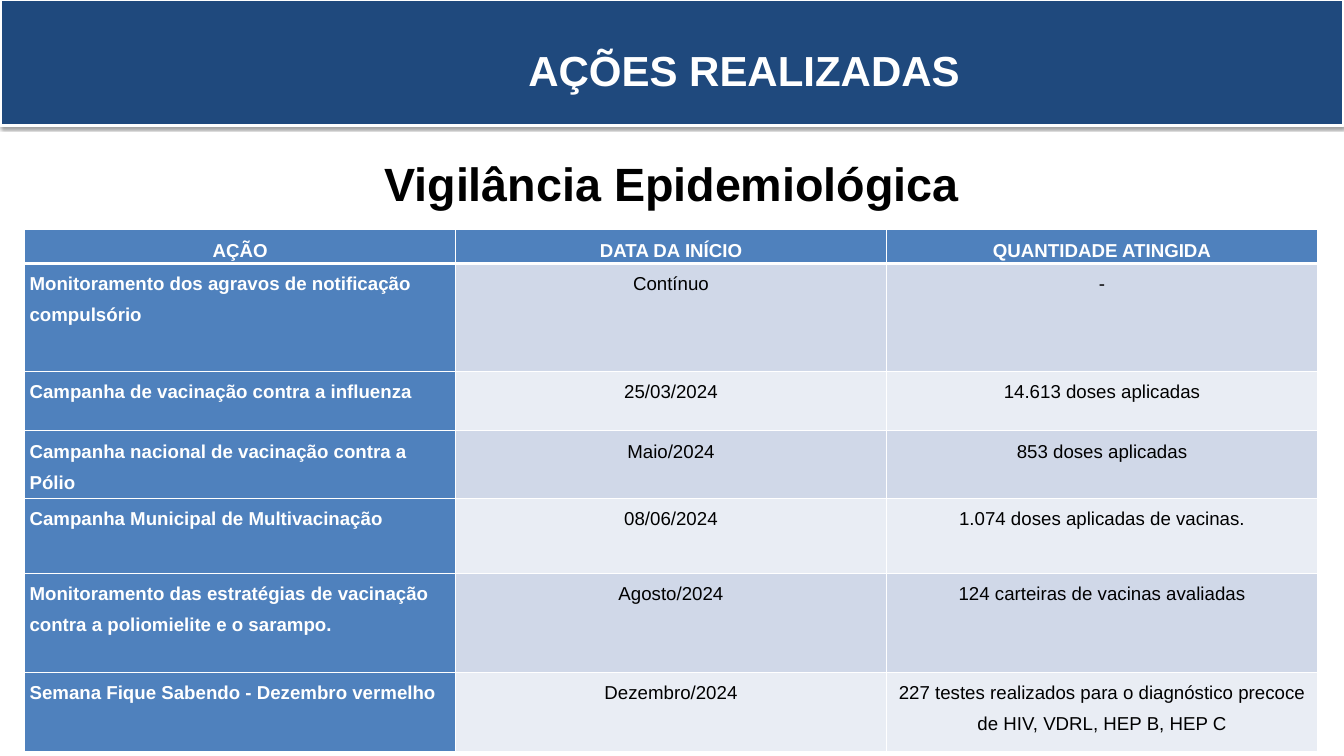
"""Build a slide listing epidemiological surveillance actions in a table."""
from lxml.etree import fromstring
from pptx import Presentation
from pptx.dml.color import RGBColor
from pptx.enum.shapes import MSO_SHAPE
from pptx.enum.text import MSO_AUTO_SIZE, PP_ALIGN
from pptx.util import Inches, Pt

NS = 'xmlns:a="http://schemas.openxmlformats.org/drawingml/2006/main"'
WHITE = RGBColor(0xFF, 0xFF, 0xFF)
BLACK = RGBColor(0, 0, 0)
NAVY = RGBColor(0x1F, 0x49, 0x7D)
BLUE = RGBColor(0x4F, 0x81, 0xBD)
BANDS = (RGBColor(0xE9, 0xED, 0xF4), RGBColor(0xD0, 0xD8, 0xE8))

TITLES = [
    ("AÇÕES REALIZADAS ", 45, WHITE, (5.04, 0.61, 12.24, 0.86)),
    ("Vigilância Epidemiológica", 50, BLACK, (0.01, 2.25, 19.98, 0.94)),
]
ROWS = [
    (0.49, "AÇÃO", "DATA DA INÍCIO", "QUANTIDADE ATINGIDA"),
    (1.61, "Monitoramento dos agravos de notificação compulsório", "Contínuo", "-"),
    (0.88, "Campanha de vacinação contra a influenza", "25/03/2024",
     "14.613 doses aplicadas"),
    (1.0, "Campanha nacional de vacinação contra a Pólio", "Maio/2024",
     "853 doses aplicadas"),
    (1.12, "Campanha Municipal de Multivacinação", "08/06/2024",
     "1.074 doses aplicadas de vacinas."),
    (1.47, "Monitoramento das estratégias de vacinação contra a poliomielite e o sarampo.",
     "Agosto/2024", "124 carteiras de vacinas avaliadas"),
    (1.18, "Semana Fique Sabendo - Dezembro vermelho", "Dezembro/2024",
     "227 testes realizados para o diagnóstico precoce de HIV, VDRL, HEP B, HEP C"),
]
COLS = (6.41, 6.41, 6.42)


def style(para, size, color, bold, align=PP_ALIGN.CENTER):
    para.alignment = align
    for run in para.runs:
        font = run.font
        font.name, font.size, font.bold = "Arial", Pt(size), bold
        font.color.rgb = color


def add_banner(slide):
    box = slide.shapes.add_shape(
        MSO_SHAPE.RECTANGLE, *map(Inches, (0.01, 0, 19.98, 1.87)))
    box.fill.solid()
    box.fill.fore_color.rgb = NAVY
    box.line.color.rgb = WHITE
    box.line.width = Pt(3)
    box.shadow.inherit = False
    box.element.spPr[-1].append(fromstring(
        f'<a:outerShdw {NS} blurRad="{Pt(3.1)}" dist="{Pt(1.6)}" dir="5400000" '
        'rotWithShape="0"><a:srgbClr val="000000"><a:alpha val="38000"/>'
        '</a:srgbClr></a:outerShdw>'))


def add_title(slide, text, size, color, place):
    frame = slide.shapes.add_textbox(*map(Inches, place)).text_frame
    frame.word_wrap = True
    frame.auto_size = MSO_AUTO_SIZE.SHAPE_TO_FIT_TEXT
    frame.text = text
    style(frame.paragraphs[0], size, color, True)


def set_edges(cell, row):
    widths = {"L": 1, "R": 1, "T": 3 if row == 1 else 1, "B": 3 if row == 0 else 1}
    props = cell._tc.get_or_add_tcPr()
    for pos, (side, width) in enumerate(widths.items()):
        props.insert(pos, fromstring(
            f'<a:ln{side} {NS} w="{Pt(width)}"><a:solidFill>'
            f'<a:srgbClr val="{WHITE}"/></a:solidFill></a:ln{side}>'))


def fill_cell(cell, text, row, col):
    head = row == 0 or col == 0
    cell.margin_left = cell.margin_right = Inches(0.07)
    cell.margin_top = cell.margin_bottom = 0
    cell.fill.solid()
    cell.fill.fore_color.rgb = BLUE if head else BANDS[row % 2]
    set_edges(cell, row)
    cell.text_frame.text = text
    para = cell.text_frame.paragraphs[0]
    para.line_spacing = 1.5
    para.space_after = Pt(8)
    left = row > 0 and col == 0
    style(para, 20, WHITE if head else BLACK, head,
          PP_ALIGN.LEFT if left else PP_ALIGN.CENTER)


def add_grid(slide):
    high = sum(row[0] for row in ROWS)
    place = map(Inches, (0.37, 3.42, sum(COLS), high))
    table = slide.shapes.add_table(len(ROWS), len(COLS), *place).table
    for col, width in zip(table.columns, COLS):
        col.width = Inches(width)
    for row, (height, *texts) in enumerate(ROWS):
        table.rows[row].height = Inches(height)
        for col, text in enumerate(texts):
            fill_cell(table.cell(row, col), text, row, col)


def main():
    deck = Presentation()
    deck.slide_width, deck.slide_height = Inches(20), Inches(11.25)
    slide = deck.slides.add_slide(deck.slide_layouts[6])
    add_banner(slide)
    for title in TITLES:
        add_title(slide, *title)
    add_grid(slide)
    deck.save("out.pptx")


if __name__ == "__main__":
    main()
